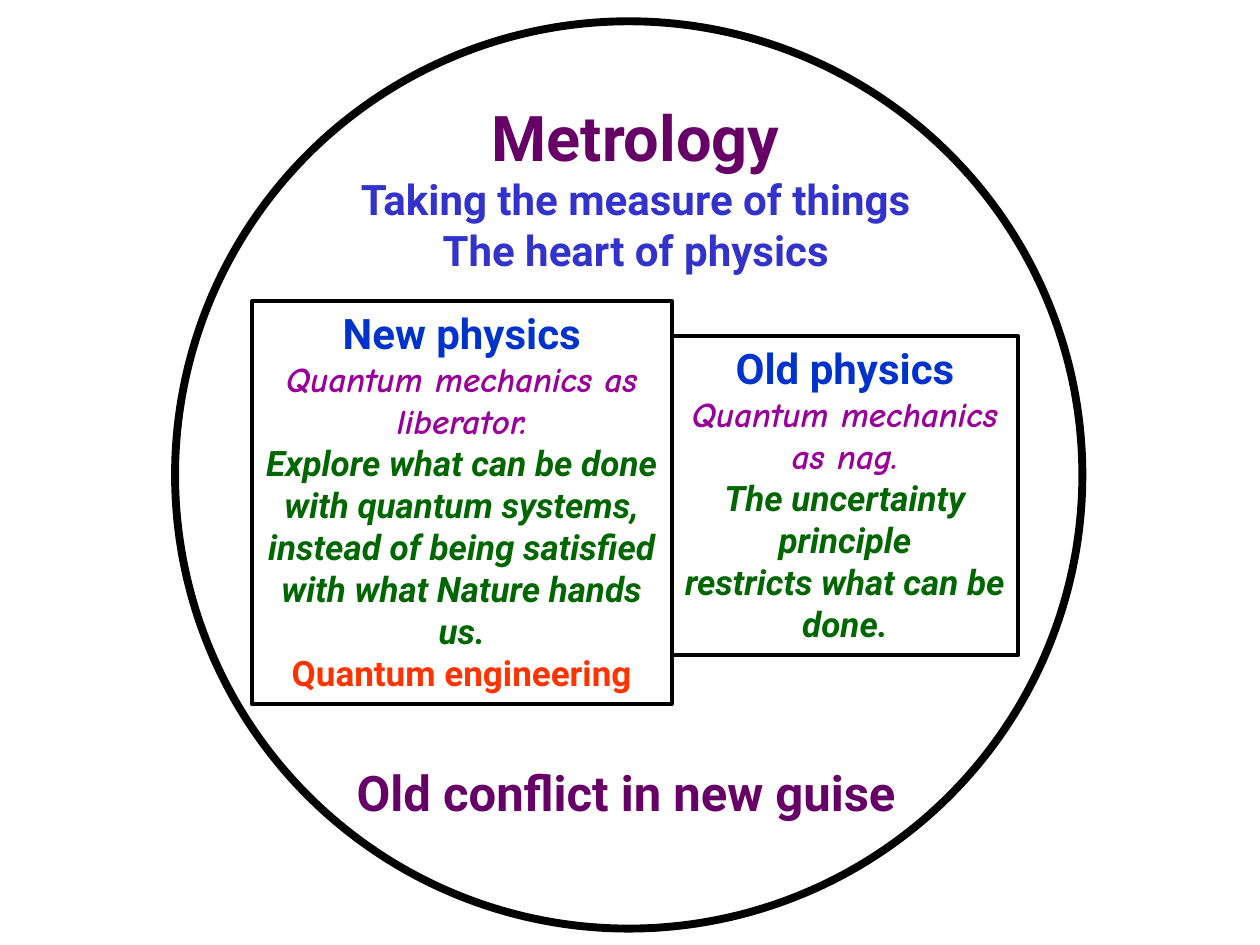
from pptx import Presentation
from pptx.dml.color import RGBColor
from pptx.enum.shapes import MSO_SHAPE
from pptx.enum.text import MSO_ANCHOR, MSO_AUTO_SIZE, PP_ALIGN
from pptx.util import Cm, Pt

BLACK = RGBColor(0x00, 0x00, 0x00)
PLUM = RGBColor(0x66, 0x00, 0x66)
INDIGO = RGBColor(0x33, 0x33, 0xCC)
BLUE = RGBColor(0x00, 0x33, 0xCC)
PURPLE = RGBColor(0x99, 0x00, 0x99)
GREEN = RGBColor(0x00, 0x66, 0x00)
ORANGE = RGBColor(0xFF, 0x33, 0x00)

SANS = "Roboto"
COMIC = "Comic Neue"

HEAD = (24, BLUE, SANS, False)
ROLE = (20, PURPLE, COMIC, True)
BODY = (20, GREEN, SANS, True)
GOAL = (20, ORANGE, SANS, False)
NAME = (36, PLUM, SANS, False)
MOTTO = (24, INDIGO, SANS, False)
CLOSE = (28, PLUM, SANS, False)


class Board:
    def __init__(self, deck):
        self.slide = deck.slides.add_slide(deck.slide_layouts[5])

    def letter(self, shape, lines, wrap):
        frame = shape.text_frame
        frame.word_wrap = wrap
        frame.auto_size = MSO_AUTO_SIZE.SHAPE_TO_FIT_TEXT
        frame.vertical_anchor = MSO_ANCHOR.TOP
        frame.text = "\n".join(text for text, style in lines)
        for para, (text, style) in zip(frame.paragraphs, lines):
            para.alignment = PP_ALIGN.CENTER
            font = para.runs[0].font
            size, font.color.rgb, font.name, font.italic = style
            font.size = Pt(size)
            font.bold = True

    def title(self, left, top, width, height, lines):
        shape = self.slide.shapes.title
        shape.left, shape.top = Cm(left), Cm(top)
        shape.width, shape.height = Cm(width), Cm(height)
        self.letter(shape, lines, False)

    def label(self, left, top, width, height, lines):
        shape = self.slide.shapes.add_textbox(Cm(left), Cm(top), Cm(width), Cm(height))
        self.letter(shape, lines, False)

    def outline(self, kind, left, top, width, height, weight):
        shape = self.slide.shapes.add_shape(kind, Cm(left), Cm(top), Cm(width), Cm(height))
        shape.shadow.inherit = False
        shape.fill.background()
        shape.line.color.rgb = BLACK
        shape.line.width = Pt(weight)
        return shape

    def ring(self, left, top, size):
        self.outline(MSO_SHAPE.OVAL, left, top, size, size, 4.5)

    def panel(self, left, top, width, height, lines):
        shape = self.outline(MSO_SHAPE.RECTANGLE, left, top, width, height, 2.25)
        self.letter(shape, lines, True)


def main():
    deck = Presentation()
    deck.slide_width, deck.slide_height = Cm(25.4), Cm(19.05)
    board = Board(deck)
    board.ring(3.53, 0.43, 18.29)
    board.title(6.68, 1.85, 12.27, 3.81, [
        ("Metrology", NAME),
        ("Taking the measure of things", MOTTO),
        ("The heart of physics", MOTTO),
    ])
    board.panel(13.54, 6.78, 6.99, 6.43, [
        ("Old physics", HEAD),
        ("Quantum mechanics as nag.", ROLE),
        ("The uncertainty principle", BODY),
        ("restricts what can be done.", BODY),
    ])
    board.panel(5.08, 6.07, 8.46, 8.13, [
        ("New physics", HEAD),
        ("Quantum mechanics as liberator.", ROLE),
        ("Explore what can be done with quantum systems, instead of "
         "being satisfied with what Nature hands us.", BODY),
        ("Quantum engineering", GOAL),
    ])
    board.label(6.55, 15.24, 12.14, 1.45, [("Old conflict in new guise", CLOSE)])
    deck.save("out.pptx")


if __name__ == "__main__":
    main()
